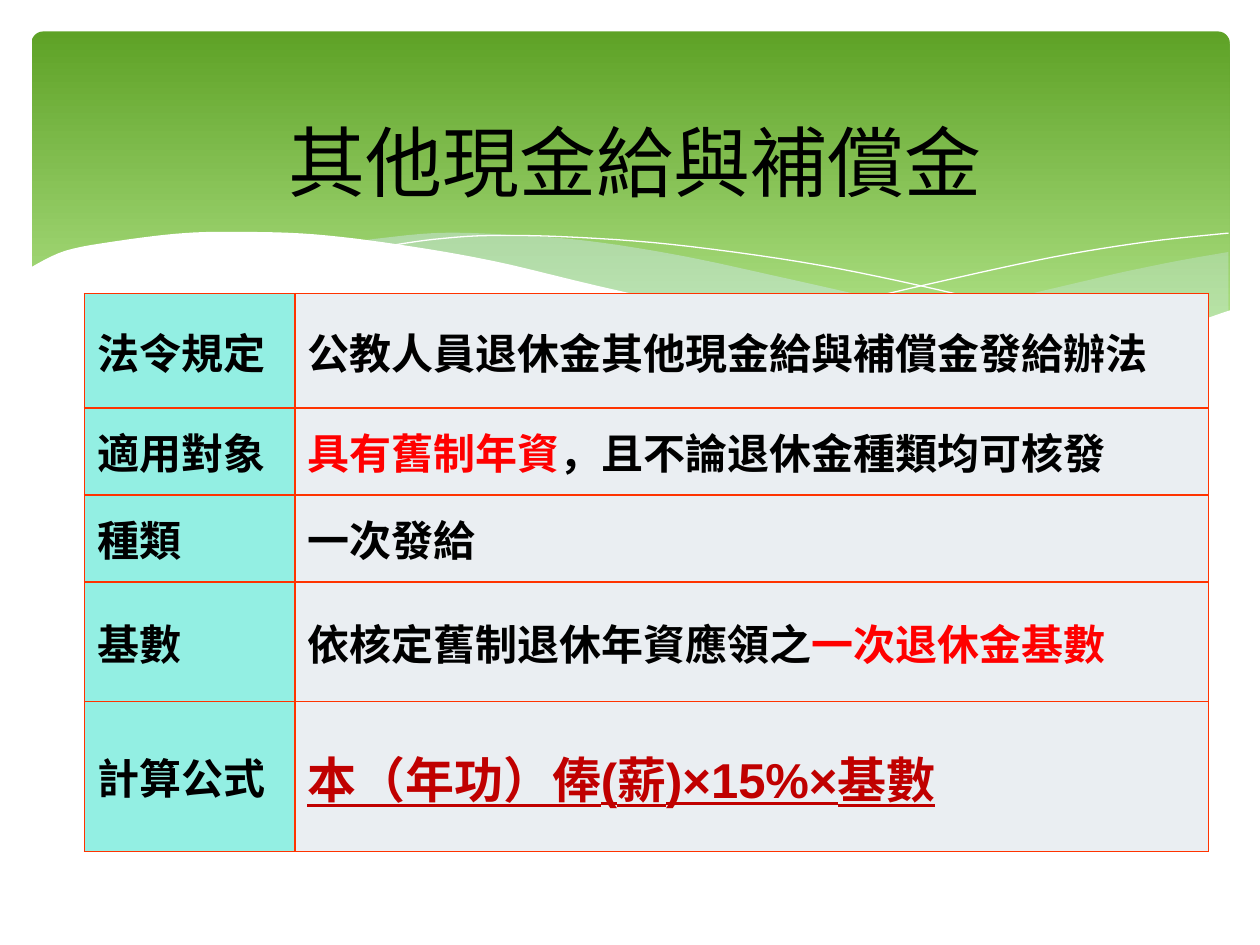
from lxml import etree
from pptx import Presentation
from pptx.dml.color import RGBColor
from pptx.enum.shapes import MSO_SHAPE
from pptx.enum.text import MSO_ANCHOR, PP_ALIGN
from pptx.oxml import parse_xml
from pptx.oxml.ns import nsdecls, qn
from pptx.util import Inches, Pt

BLACK, RED, CRIMSON = "000000", "FF0000", "C00000"
MINT, PALE, BORDER = "93EFE3", "EAEEF2", "FF3300"

# Each row: height, label, then (text, format) runs
ROWS = [
    (0.91, "法令規定", [("公教人員退休金其他現金給與補償金發給辦法", {})]),
    (0.69, "適用對象", [("具有舊制年資", {"color": RED}),
                    ("，且不論退休金種類均可核發", {})]),
    (0.69, "種類", [("一次發給", {})]),
    (0.95, "基數", [("依核定舊制退休年資應領之", {}),
                  ("一次退休金基數", {"color": RED})]),
    (1.19, "計算公式", [("本（年功）俸(薪)×15%×基數",
                     {"size": Pt(28), "color": CRIMSON, "underline": True})]),
]

# Wave curves: points the curve passes through, relative to the wave box
RIGHT_TOP = [(9.5, .15), (9.1, .22), (8.66, .31), (8.36, .38), (7.54, .57),
             (6.81, .72), (6.36, .8)]
RIGHT_LOW = [(6.36, .8), (6.94, .87), (7.44, .92), (7.89, .93), (8.38, .91),
             (8.8, .84), (9.17, .74), (9.5, .62)]
MID_TOP = [(2.61, .06), (3.19, 0), (3.74, .01), (4.4, .06), (5.16, .18),
           (6.04, .37), (7.16, .62), (8.12, .8), (8.68, .88)]
MID_LOW = [(8.68, .88), (8.03, .93), (7.36, .91), (6.4, .81), (5.41, .63),
           (4.24, .37), (3.37, .18), (2.61, .06)]
FALLING = [(2.84, .1), (3.19, .05), (3.62, .02), (4.25, .03), (5.08, .09),
           (6.11, .23), (7.02, .41), (8.06, .66), (8.82, .87)]
RISING = [(5.88, .72), (6.47, .56), (7.23, .38), (8.11, .19), (8.85, .07),
          (9.5, 0)]
FRONT = [(-.02, .28), (.27, .14), (.7, .06), (1.21, 0), (1.68, -.01),
         (2.25, .01), (2.91, .09), (3.66, .22), (4.5, .42), (5.54, .65),
         (6.43, .8), (7.36, .9), (8.12, .91), (8.85, .82), (9.52, .61)]
CORNERS = [(9.52, 1.44), (-.02, 1.44)]


def tint(code):
    return RGBColor.from_string(code)


def add_run(para, text, style):
    run = para.add_run()
    run.text = text
    style = {"size": Pt(24), "bold": True, "color": BLACK, "name": "Arial",
             **style}
    for key, value in style.items():
        if key == "color":
            run.font.color.rgb = tint(value)
        else:
            setattr(run.font, key, value)
    return run


def smooth(points, steps=6):
    """Catmull-Rom curve through the points."""
    ends = [points[0], *points, points[-1]]
    curve = [points[0]]
    for a, b, c, d in zip(ends, ends[1:], ends[2:], ends[3:]):
        for step in range(1, steps + 1):
            t = step / steps
            curve.append(tuple(
                (2 * q + (r - p) * t + (2 * p - 5 * q + 4 * r - s) * t ** 2
                 + (3 * q - p - 3 * r + s) * t ** 3) / 2
                for p, q, r, s in zip(a, b, c, d)))
    return curve


def add_wave(slide, left, top, points, fill=None, alpha=100):
    """Filled wave, or a thin white line when no fill is given."""
    dots = [(Inches(left + x), Inches(top + y)) for x, y in points]
    build = slide.shapes.build_freeform(*dots[0])
    build.add_line_segments(dots[1:], close=bool(fill))
    wave = build.convert_to_shape()
    wave.shadow.inherit = False
    if not fill:
        wave.fill.background()
        wave.line.color.rgb = tint("FFFFFF")
        wave.line.width = Pt(0.75)
        return
    wave.line.fill.background()
    wave.fill.solid()
    wave.fill.fore_color.rgb = tint(fill)
    if alpha < 100:
        color = wave.fill._xPr.find(qn("a:solidFill"))[0]
        etree.SubElement(color, qn("a:alpha"), val=str(alpha * 1000))


def add_banner(slide, left, top, width, height):
    # Green gradient panel
    panel = slide.shapes.add_shape(
        MSO_SHAPE.ROUNDED_RECTANGLE, *map(Inches, (left, top, width, height)))
    panel.adjustments[0] = 0.034
    panel.shadow.inherit = False
    panel.line.fill.background()
    panel.fill.gradient()
    panel.fill.gradient_angle = 270
    stops = panel.fill.gradient_stops
    for stop, place, code in zip(stops, (0, 0.9), ("5EA226", "B1E388")):
        stop.position = place
        stop.color.rgb = tint(code)

    # Waves along the lower edge
    base = top + 1.6
    add_wave(slide, left, base, smooth(RIGHT_TOP) + smooth(RIGHT_LOW),
             "D6ECFF", 29)
    add_wave(slide, left, base, smooth(MID_TOP) + smooth(MID_LOW),
             "D6ECFF", 40)
    add_wave(slide, left, base, smooth(FALLING))
    add_wave(slide, left, base, smooth(RISING))
    add_wave(slide, left, base, smooth(FRONT) + CORNERS, "FFFFFF")


def add_title(slide, left, top, width, height, text):
    box = slide.shapes.add_textbox(*map(Inches, (left, top, width, height)))
    frame = box.text_frame
    frame.word_wrap = True
    frame.vertical_anchor = MSO_ANCHOR.MIDDLE
    para = frame.paragraphs[0]
    para.alignment = PP_ALIGN.CENTER
    run = add_run(para, text, {"size": Pt(44), "bold": False})
    # Soft shadow under the letters
    glow = parse_xml(
        f'<a:effectLst {nsdecls("a")}><a:outerShdw blurRad="38100" '
        'dist="38100" dir="2700000"><a:srgbClr val="000000">'
        '<a:alpha val="43000"/></a:srgbClr></a:outerShdw></a:effectLst>')
    run.font._element.find(qn("a:solidFill")).addnext(glow)


def style_cell(cell, fill):
    cell.vertical_anchor = MSO_ANCHOR.MIDDLE
    cell.fill.solid()
    cell.fill.fore_color.rgb = tint(fill)
    props = cell._tc.get_or_add_tcPr()
    for spot, side in enumerate(("lnL", "lnR", "lnT", "lnB")):
        props.insert(spot, parse_xml(
            f'<a:{side} {nsdecls("a")} w="12700"><a:solidFill>'
            f'<a:srgbClr val="{BORDER}"/></a:solidFill></a:{side}>'))


def add_rules(slide, left, top, widths):
    height = sum(row[0] for row in ROWS)
    grid = slide.shapes.add_table(
        len(ROWS), len(widths),
        *map(Inches, (left, top, sum(widths), height))).table
    grid.first_row = grid.horz_banding = False
    for col, width in zip(grid.columns, widths):
        col.width = Inches(width)
    for row, (tall, label, runs) in zip(grid.rows, ROWS):
        row.height = Inches(tall)
        head, body = row.cells
        style_cell(head, MINT)
        style_cell(body, PALE)
        para = head.text_frame.paragraphs[0]
        para.alignment = PP_ALIGN.JUSTIFY
        add_run(para, label, {})
        for text, style in runs:
            add_run(body.text_frame.paragraphs[0], text, style)


def main():
    deck = Presentation()
    deck.slide_width, deck.slide_height = Inches(10), Inches(7.5)
    slide = deck.slides.add_slide(deck.slide_layouts[6])
    add_banner(slide, 0.25, 0.25, 9.51, 2.7)
    add_title(slide, 0.59, 0.84, 8.9, 0.87, "其他現金給與補償金")
    add_rules(slide, 0.67, 2.33, (1.67, 7.25))
    deck.save("out.pptx")


if __name__ == "__main__":
    main()
